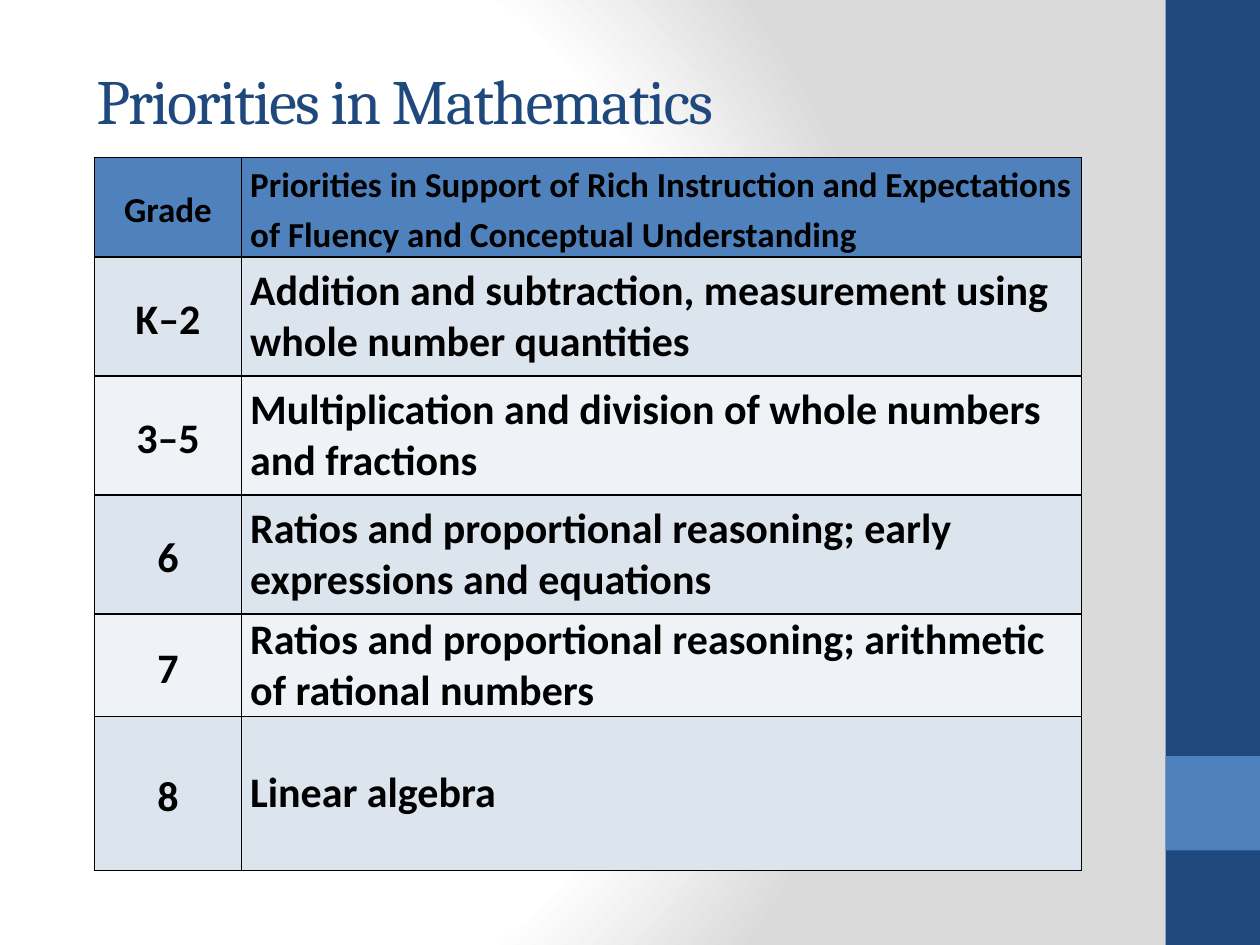
from lxml.etree import SubElement
from pptx import Presentation
from pptx.dml.color import RGBColor as RGB
from pptx.enum.shapes import MSO_SHAPE as Kind
from pptx.enum.text import MSO_ANCHOR as Anchor, PP_ALIGN as Align
from pptx.oxml import parse_xml
from pptx.oxml.ns import qn
from pptx.util import Pt

NAVY = RGB(0x1F, 0x49, 0x7D)
BLUE = RGB(0x4F, 0x81, 0xBD)
PALE = RGB(0xDC, 0xE5, 0xEE)
LIGHT = RGB(0xEF, 0xF3, 0xF7)
BLACK = RGB(0, 0, 0)

# Content
TITLE = "Priorities in Mathematics"
ROWS = [  # grade, priority, row height
    ("Grade", "Priorities in Support of Rich Instruction and "
     "Expectations of Fluency and Conceptual Understanding", 57),
    ("K–2", "Addition and subtraction, measurement using whole number quantities", 68),
    ("3–5", "Multiplication and division of whole numbers and fractions", 68),
    ("6", "Ratios and proportional reasoning; early expressions and equations", 68),
    ("7", "Ratios and proportional reasoning; arithmetic of rational numbers", 58),
    ("8", "Linear algebra", 88),
]
COLS = [84, 480]
BANDS = [  # left, top, width, height, colour
    (666, 0, 54, 540, NAVY),
    (666, 432, 54, 54, BLUE),
]
GLOW = """<a:gradFill xmlns:a="http://schemas.openxmlformats.org/drawingml/2006/main"
 rotWithShape="1"><a:gsLst>
<a:gs pos="0"><a:srgbClr val="FFFFFF"/></a:gs>
<a:gs pos="75000"><a:srgbClr val="FFFFFF"/></a:gs>
<a:gs pos="100000"><a:srgbClr val="DADADA"/></a:gs></a:gsLst>
<a:path path="circle"><a:fillToRect l="20000" t="50000" r="100000" b="50000"/></a:path>
</a:gradFill>"""


def style(para, name, size, color, bold=False):
    font = para.font
    font.name, font.size, font.bold = name, Pt(size), bold
    font.color.rgb = color


def add_border(cell):
    props = cell._tc.get_or_add_tcPr()
    for side in ("a:lnL", "a:lnR", "a:lnT", "a:lnB"):
        line = SubElement(props, qn(side), w=str(Pt(1)))
        fill = SubElement(line, qn("a:solidFill"))
        SubElement(fill, qn("a:srgbClr"), val=str(BLACK))


def fill_cell(cell, text, row, col):
    add_border(cell)
    cell.fill.solid()
    cell.fill.fore_color.rgb = BLUE if row == 0 else (LIGHT, PALE)[row % 2]
    cell.vertical_anchor = Anchor.MIDDLE
    cell.margin_left = cell.margin_right = Pt(5)
    cell.margin_top = cell.margin_bottom = 0
    cell.text = text
    para = cell.text_frame.paragraphs[0]
    style(para, "Calibri", 24 if row else 20, BLACK, True)
    para.alignment = Align.LEFT if col else Align.CENTER
    para.line_spacing = 1.0 if row and col else 1.15


deck = Presentation()
deck.slide_width, deck.slide_height = Pt(720), Pt(540)
slide = deck.slides.add_slide(deck.slide_layouts[6])
shapes = slide.shapes

# Background glow
slide.background.fill.gradient()
grad = slide.background._cSld.find(".//" + qn("a:gradFill"))
grad.getparent().replace(grad, parse_xml(GLOW))

# Side bands
for *box, color in BANDS:
    band = shapes.add_shape(Kind.RECTANGLE, *map(Pt, box))
    band.shadow.inherit = False
    band.fill.solid()
    band.fill.fore_color.rgb = color
    band.line.fill.background()

# Priorities table
frame = shapes.add_table(len(ROWS), len(COLS), Pt(54), Pt(90), Pt(sum(COLS)),
                         Pt(sum(row[-1] for row in ROWS)))
table = frame.table
for col, width in enumerate(COLS):
    table.columns[col].width = Pt(width)
for r, (*texts, height) in enumerate(ROWS):
    table.rows[r].height = Pt(height)
    for c, text in enumerate(texts):
        fill_cell(table.cell(r, c), text, r, c)

# Title
title = shapes.add_textbox(Pt(48), Pt(18), Pt(642), Pt(78)).text_frame
title.word_wrap = True
title.vertical_anchor = Anchor.MIDDLE
title.text = TITLE
head = title.paragraphs[0]
style(head, "Cambria", 36, NAVY)
head.runs[0].font._element.set("spc", "-100")

deck.save("out.pptx")
